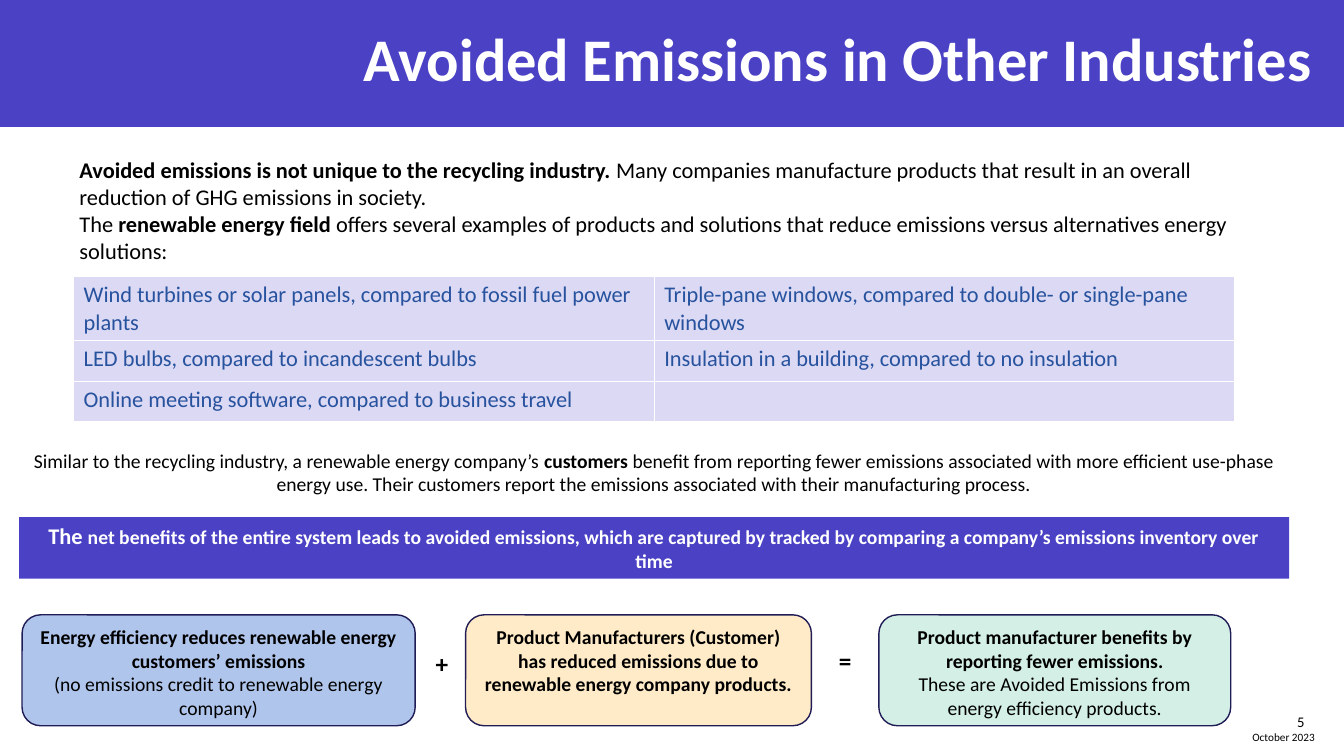
import pptx
import pptx.util
import pptx.dml.color
import pptx.enum.shapes
import pptx.enum.text
import pptx.oxml
import pptx.oxml.ns

Pt = pptx.util.Pt
SHAPE = pptx.enum.shapes.MSO_SHAPE
ALIGN = pptx.enum.text.PP_ALIGN
ANCHOR = pptx.enum.text.MSO_ANCHOR

COLORS = {
    "purple": "4A41C5",
    "navy": "201C56",
    "blue": "AFC5EB",
    "cream": "FFEBC7",
    "mint": "D3EFE6",
    "lavender": "DBD9F3",
    "table text": "27529E",
    "white": "FFFFFF",
    "black": "000000",
}


class SlideBuilder:
    font = "Calibri"

    def __init__(self, slide):
        self.slide = slide

    def color(self, name):
        return pptx.dml.color.RGBColor.from_string(COLORS[name])

    def style(self, run, size, color="black", bold=False):
        run.font.name = self.font
        run.font.size = Pt(size)
        run.font.bold = bold
        run.font.color.rgb = self.color(color)

    def fill_text(self, frame, paragraphs, size, color="black", align=ALIGN.LEFT,
                  anchor=ANCHOR.TOP, before=0):
        frame.word_wrap = True
        frame.vertical_anchor = anchor
        for index, pieces in enumerate(paragraphs):
            paragraph = frame.add_paragraph() if index else frame.paragraphs[0]
            paragraph.alignment = align
            paragraph.space_before = Pt(0 if index else before)
            for text, bold, *own_size in pieces:
                run = paragraph.add_run()
                run.text = text
                self.style(run, own_size[0] if own_size else size, color, bold)

    def title(self, text, box, size):
        title = self.slide.shapes.title
        title.left, title.top, title.width, title.height = map(Pt, box)
        title.text_frame.text = text
        title.text_frame.word_wrap = True
        title.text_frame.vertical_anchor = ANCHOR.MIDDLE
        heading = title.text_frame.paragraphs[0]
        heading.alignment = ALIGN.RIGHT
        self.style(heading.runs[0], size, "white", True)
        return title

    def text(self, box, paragraphs, size, **options):
        label = self.slide.shapes.add_textbox(*map(Pt, box))
        self.fill_text(label.text_frame, paragraphs, size, **options)

    def panel(self, kind, box, fill, line=None, paragraphs=(), size=14, **options):
        panel = self.slide.shapes.add_shape(kind, *map(Pt, box))
        panel.shadow.inherit = False
        panel.fill.solid()
        panel.fill.fore_color.rgb = self.color(fill)
        if line:
            panel.line.color.rgb = self.color(line)
            panel.line.width = Pt(1)
        else:
            panel.line.fill.background()
        self.fill_text(panel.text_frame, paragraphs, size, **options)
        return panel

    def borders(self, cell, color):
        properties = cell._tc.get_or_add_tcPr()
        for position, side in enumerate(("lnL", "lnR", "lnT", "lnB")):
            properties.insert(position, pptx.oxml.parse_xml(
                f'<a:{side} {pptx.oxml.ns.nsdecls("a")} w="12700"><a:solidFill>'
                f'<a:srgbClr val="{COLORS[color]}"/></a:solidFill></a:{side}>'))

    def table(self, box, rows, heights, size):
        table = self.slide.shapes.add_table(len(rows), len(rows[0]), *map(Pt, box)).table
        table.first_row = False
        table.horz_banding = False
        for row, height in zip(table.rows, heights):
            row.height = Pt(height)
        for row, texts in zip(table.rows, rows):
            for cell, text in zip(row.cells, texts):
                cell.fill.solid()
                cell.fill.fore_color.rgb = self.color("lavender")
                self.borders(cell, "white")
                if text:
                    cell.text_frame.text = text
                    self.style(cell.text_frame.paragraphs[0].runs[0], size, "table text")


def main():
    deck = pptx.Presentation()
    deck.slide_width, deck.slide_height = Pt(960), Pt(540)
    builder = SlideBuilder(deck.slides.add_slide(deck.slide_layouts[5]))

    title = builder.title("Avoided Emissions in Other Industries",
                          (59, 10.8, 885.6, 60.5), 43.2)
    header = builder.panel(SHAPE.RECTANGLE, (0, 0, 960, 90.7), "purple")
    title.element.addprevious(header.element)

    builder.text((49.7, 108, 860.4, 85), [
        [("Avoided emissions is not unique to the recycling industry. ", True),
         ("Many companies manufacture products that result in an overall "
          "reduction of GHG emissions in society.", False)],
        [("The ", False), ("renewable energy field ", True),
         ("offers several examples of products and solutions that reduce "
          "emissions versus alternatives energy solutions:", False)],
    ], 16)

    builder.table((52.6, 197.5, 829.4, 103.8), [
        ("Wind turbines or solar panels, compared to fossil fuel power plants",
         "Triple-pane windows, compared to double- or single-pane windows"),
        ("LED bulbs, compared to incandescent bulbs",
         "Insulation in a building, compared to no insulation"),
        ("Online meeting software, compared to business travel", ""),
    ], (45.4, 29.2, 29.2), 16)

    builder.text((13.7, 316.8, 907.2, 41), [[
        ("Similar to the recycling industry, a renewable energy company’s ", False),
        ("customers", True),
        (" benefit from reporting fewer emissions associated with more efficient "
         "use-phase energy use. Their customers report the emissions associated "
         "with their manufacturing process.", False),
    ]], 14, align=ALIGN.CENTER, before=6)

    builder.panel(SHAPE.RECTANGLE, (13.7, 369.4, 907.2, 43.9), "purple", paragraphs=[[
        ("The ", True, 16),
        ("net benefits of the entire system leads to avoided emissions, which are "
         "captured by tracked by comparing a company’s emissions inventory over time",
         True),
    ]], color="white", align=ALIGN.CENTER)

    cards = [
        (15.8, 280.8, "blue", 0, [
            [("Energy efficiency reduces renewable energy customers’ emissions", True)],
            [("(no emissions credit to renewable energy company)", False)]]),
        (332.6, 247, "cream", 6, [
            [("Product Manufacturers (Customer) has reduced emissions due to "
              "renewable energy company products.", True)]]),
        (627.8, 251.3, "mint", 6, [
            [("Product manufacturer benefits by reporting fewer emissions.", True)],
            [("These are Avoided Emissions from energy efficiency products.", False)]]),
    ]
    for left, width, fill, before, paragraphs in cards:
        builder.panel(SHAPE.ROUNDED_RECTANGLE, (left, 439.2, width, 79.2), fill, "navy",
                      paragraphs, align=ALIGN.CENTER, before=before)

    for left, top, sign in ((291.6, 459.4, "+"), (579.6, 457.2, "=")):
        builder.text((left, top, 48.2, 28.8), [[(sign, True)]], 18,
                     align=ALIGN.CENTER, anchor=ANCHOR.MIDDLE)

    builder.text((889.2, 501.1, 49.7, 28.8), [[("5", False)]], 10.5,
                 align=ALIGN.RIGHT, anchor=ANCHOR.MIDDLE)
    builder.text((883.4, 518.4, 67, 17.3), [[("October 2023", False)]], 8,
                 align=ALIGN.CENTER)
    deck.save("out.pptx")


if __name__ == "__main__":
    main()
